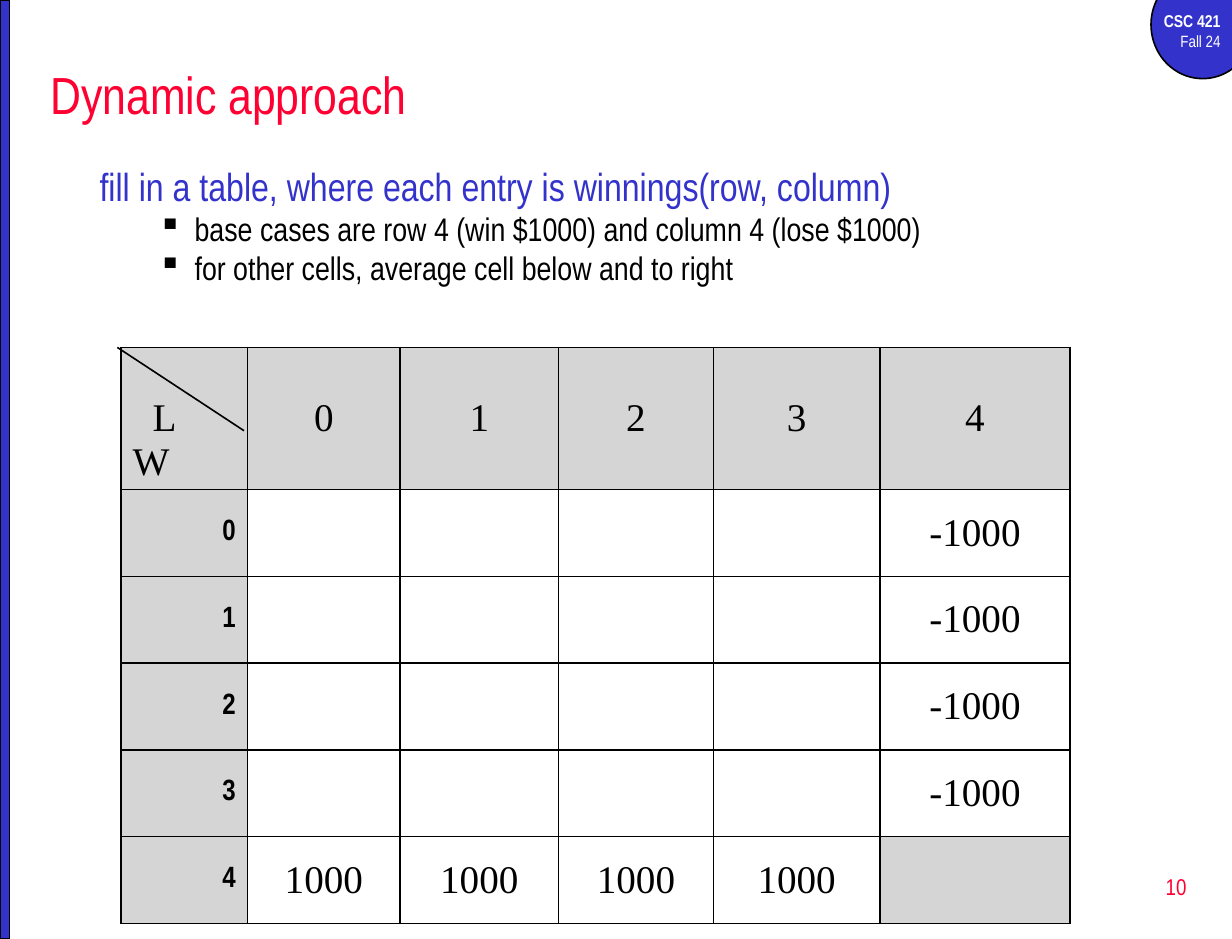
from dataclasses import dataclass

from lxml import etree
from pptx import Presentation
from pptx import util as u
from pptx.dml.color import RGBColor
from pptx.enum import shapes as sh, text as tx
from pptx.oxml.ns import qn

HUES = {"blue": "3333CC", "red": "FF0033", "black": "000000",
        "white": "FFFFFF", "gray": "D5D5D5"}
SANS, SERIF = "Arial Narrow", "Times New Roman"
LEFT, MID, RIGHT = tx.PP_ALIGN.LEFT, tx.PP_ALIGN.CENTER, tx.PP_ALIGN.RIGHT


@dataclass
class Line:
    text: str
    size: float
    hue: str = "black"
    font: str = SANS
    bold: bool = False
    align: tx.PP_ALIGN = LEFT
    bullet: bool = False
    indent: float = 0


@dataclass
class Box:
    left: float
    top: float
    width: float
    height: float

    def emu(self) -> list:
        return [u.Inches(n) for n in (self.left, self.top, self.width, self.height)]


def color(name: str) -> RGBColor:
    return RGBColor.from_string(HUES[name])


def write(frame, lines: list[Line]) -> None:
    frame.text = "\n".join(line.text for line in lines)
    for para, line in zip(frame.paragraphs, lines):
        para.alignment = line.align
        font = para.runs[0].font
        font.name, font.size, font.bold = line.font, u.Pt(line.size), line.bold
        font.color.rgb = color(line.hue)
        props = para._p.get_or_add_pPr()
        if line.indent:
            props.set("marL", str(u.Inches(line.indent)))
        if line.bullet:
            para.line_spacing = 0.8
            para.space_before = u.Pt(4.6)
            props.set("indent", str(u.Inches(-0.31)))
            etree.SubElement(props, qn("a:buChar"), char="▪")


def add_text(slide, box: Box, lines: list[Line], anchor=tx.MSO_ANCHOR.TOP) -> None:
    frame = slide.shapes.add_textbox(*box.emu()).text_frame
    frame.word_wrap = True
    frame.vertical_anchor = anchor
    write(frame, lines)


def add_form(slide, kind: sh.MSO_SHAPE, box: Box) -> None:
    form = slide.shapes.add_shape(kind, *box.emu())
    form.shadow.inherit = False
    form.fill.solid()
    form.fill.fore_color.rgb = color("blue")
    form.line.color.rgb = color("black")
    form.line.width = u.Pt(1)


def style_cell(cell, hue: str) -> None:
    props = cell._tc.get_or_add_tcPr()
    for side in ("a:lnL", "a:lnR", "a:lnT", "a:lnB"):
        edge = etree.SubElement(props, qn(side), w=str(u.Pt(1)))
        fill = etree.SubElement(edge, qn("a:solidFill"))
        etree.SubElement(fill, qn("a:srgbClr"), val=HUES["black"])
    cell.fill.solid()
    cell.fill.fore_color.rgb = color(hue)
    cell.vertical_anchor = tx.MSO_ANCHOR.MIDDLE


def add_grid(slide, box: Box, cols: list[float], rows: list[float]) -> None:
    grid = slide.shapes.add_table(len(rows), len(cols), *box.emu()).table
    grid.first_row = grid.horz_banding = False
    for col, width in zip(grid.columns, cols):
        col.width = u.Inches(width)
    for row, height in zip(grid.rows, rows):
        row.height = u.Inches(height)
    end = len(rows) - 1
    for r in range(len(rows)):
        for c in range(len(cols)):
            cell = grid.cell(r, c)
            head = r == 0 or c == 0 or r == c == end
            style_cell(cell, "gray" if head else "white")
            if r == c == 0:
                cell.vertical_anchor = tx.MSO_ANCHOR.BOTTOM
                write(cell.text_frame, [Line("L", 24, font=SERIF, indent=0.17),
                                        Line("W", 24, font=SERIF)])
            elif c == 0:
                write(cell.text_frame, [Line(str(r - 1), 18, bold=True, align=RIGHT)])
            elif r == 0 or (r == end) != (c == end):
                label = str(c - 1) if r == 0 else "1000" if r == end else "-1000"
                write(cell.text_frame, [Line(label, 24, font=SERIF, align=MID)])


def main() -> None:
    deck = Presentation()
    deck.slide_width, deck.slide_height = u.Inches(10.5), u.Inches(8)
    slide = deck.slides.add_slide(deck.slide_layouts[6])

    # Course badge and side bar
    add_form(slide, sh.MSO_SHAPE.OVAL, Box(9.81, -0.25, 0.88, 0.92))
    add_text(slide, Box(9.67, 0.04, 0.83, 0.46),
             [Line("CSC 421", 10.5, "white", bold=True, align=RIGHT),
              Line("Fall 24", 10, "white", align=RIGHT)])
    add_form(slide, sh.MSO_SHAPE.RECTANGLE, Box(0, 0, 0.08, 8))

    # Title and page number
    add_text(slide, Box(0.33, 0.42, 9.92, 0.75),
             [Line("Dynamic approach", 32, "red")], tx.MSO_ANCHOR.MIDDLE)
    add_text(slide, Box(8.02, 7.29, 2.19, 0.53),
             [Line("10", 14, "red", align=RIGHT)], tx.MSO_ANCHOR.MIDDLE)

    # Winnings table
    cols = [1.08, 1.3, 1.35, 1.32, 1.42, 1.62]
    rows = [1.21] + [0.74] * 5
    add_grid(slide, Box(1.03, 2.96, sum(cols), sum(rows)), cols, rows)

    # Explanation
    points = ["base cases are row 4 (win $1000) and column 4 (lose $1000)",
              "for other cells, average cell below and to right"]
    add_text(slide, Box(0.75, 1.33, 9.52, 1.75),
             [Line("fill in a table, where each entry is winnings(row, column)", 24, "blue")]
             + [Line(point, 20, bullet=True, indent=0.81) for point in points])

    # Diagonal in the corner cell
    slash = slide.shapes.add_connector(
        sh.MSO_CONNECTOR.STRAIGHT, *[u.Inches(n) for n in (1, 2.96, 2.08, 3.67)])
    slash.line.color.rgb = color("black")
    slash.line.width = u.Pt(1)
    etree.SubElement(slash._element.spPr, qn("a:effectLst"))

    deck.save("out.pptx")


if __name__ == "__main__":
    main()
